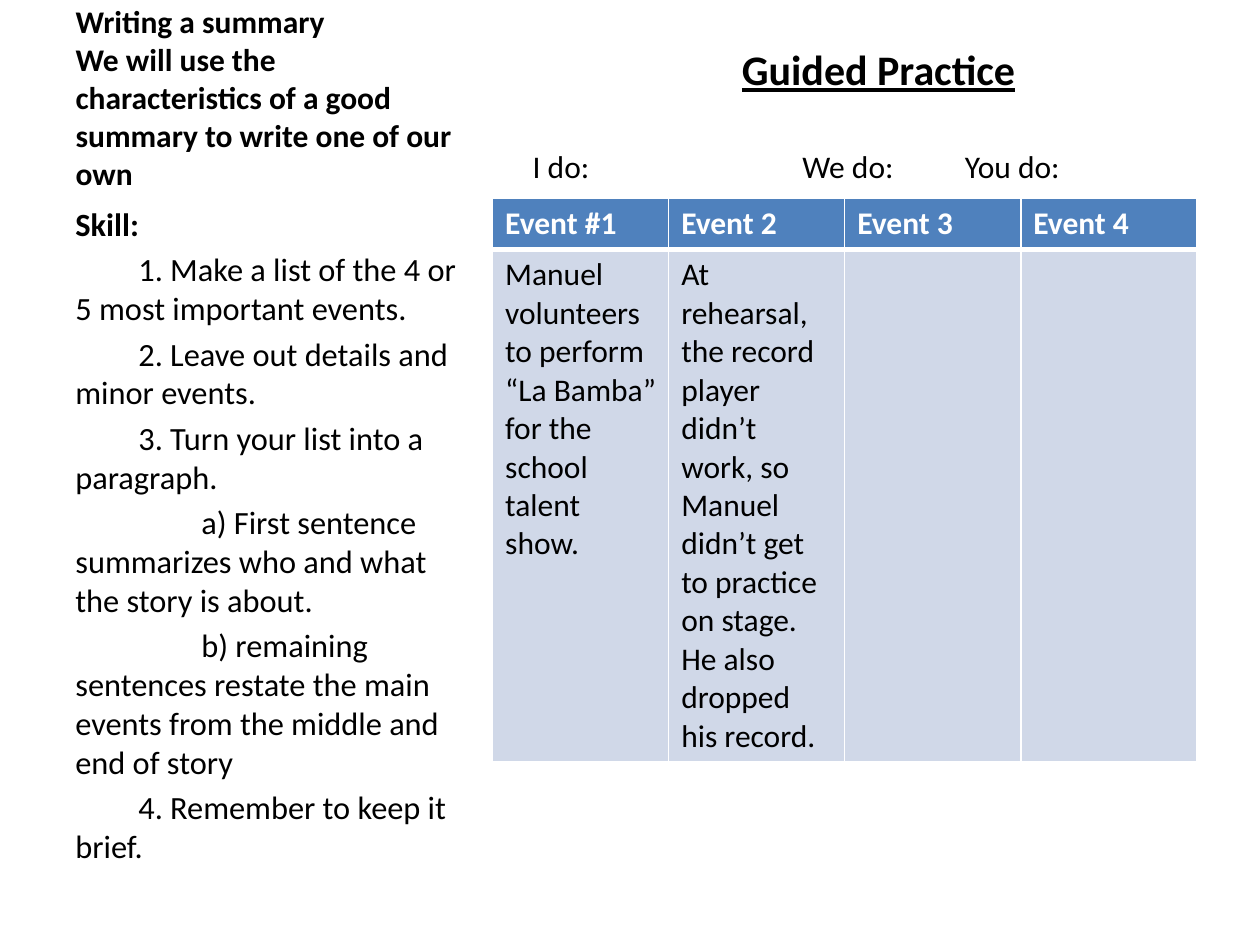
from dataclasses import dataclass

from lxml import etree
from pptx import Presentation
from pptx.dml.color import RGBColor
from pptx.enum.text import MSO_ANCHOR, MSO_AUTO_SIZE, PP_ALIGN
from pptx.oxml.ns import qn
from pptx.util import Inches, Pt

LEFT = PP_ALIGN.LEFT
TOP, BOTTOM = MSO_ANCHOR.TOP, MSO_ANCHOR.BOTTOM
NO_AUTOFIT = MSO_AUTO_SIZE.NONE
TITLE_ONLY = 5


@dataclass(frozen=True)
class Theme:
    font: str = "Calibri"
    text: RGBColor = RGBColor(0x00, 0x00, 0x00)
    white: RGBColor = RGBColor(0xFF, 0xFF, 0xFF)
    header: RGBColor = RGBColor(0x4F, 0x81, 0xBD)
    body: RGBColor = RGBColor(0xD0, 0xD8, 0xE8)
    normal: float = 18
    steps: float = 18.5
    heading: float = 24
    thin: float = 1
    thick: float = 3


class LessonPage:
    """Holds the theme and the current slide."""

    def __init__(self, deck, theme):
        self.theme = theme
        self.page = deck.slides.add_slide(deck.slide_layouts[TITLE_ONLY])

    def style(self, font, color=None, **formats):
        values = {"name": self.theme.font, "size": Pt(self.theme.normal),
                  "bold": False, **formats}
        for name, value in values.items():
            setattr(font, name, value)
        font.color.rgb = color or self.theme.text

    def frame(self, box, anchor=TOP):
        formats = {"word_wrap": True, "auto_size": NO_AUTOFIT,
                   "vertical_anchor": anchor}
        for name, value in formats.items():
            setattr(box.text_frame, name, value)
        return box.text_frame

    def title(self, text, left, top, width, height):
        box = self.page.shapes.title
        places = {"left": left, "top": top, "width": width, "height": height}
        for name, value in places.items():
            setattr(box, name, Inches(value))
        para = self.frame(box, BOTTOM).paragraphs[0]
        para.text = text
        para.alignment = LEFT
        self.style(para.font, bold=True)

    def text(self, text, left, top, width, height, tabs=(), **formats):
        box = self.page.shapes.add_textbox(
            *map(Inches, (left, top, width, height)))
        para = self.frame(box).paragraphs[0]
        para.text = text
        if tabs:
            stops = etree.SubElement(para._p.get_or_add_pPr(), qn("a:tabLst"))
            for place in tabs:
                etree.SubElement(stops, qn("a:tab"),
                                 pos=str(Inches(place)), algn="l")
        self.style(para.font, **formats)

    def steps(self, heading, items, left, top, width, height):
        """A bold heading, then steps whose first lines are indented."""
        box = self.page.shapes.add_textbox(
            *map(Inches, (left, top, width, height)))
        frame = self.frame(box)
        size = Pt(self.theme.steps)
        frame.text = heading
        self.style(frame.paragraphs[0].font, size=size, bold=True)
        for level, text in items:
            para = frame.add_paragraph()
            para.text = text
            para._p.get_or_add_pPr().set("indent", str(Inches(level * 0.5)))
            para.space_before = Pt(self.theme.steps * 0.2)
            self.style(para.font, size=size)

    def borders(self, cell, **widths):
        properties = cell._tc.get_or_add_tcPr()
        for side in "LRTB":
            width = Pt(widths.get(side, self.theme.thin))
            line = etree.SubElement(properties, qn(f"a:ln{side}"),
                                    w=str(width))
            fill = etree.SubElement(line, qn("a:solidFill"))
            etree.SubElement(fill, qn("a:srgbClr"), val=str(self.theme.white))

    def table(self, rows, heights, left, top, width):
        theme = self.theme
        table = self.page.shapes.add_table(
            len(rows), len(rows[0]),
            *map(Inches, (left, top, width, sum(heights)))).table
        for index, values in enumerate(rows):
            table.rows[index].height = Inches(heights[index])
            is_header = index == 0
            for column, value in enumerate(values):
                cell = table.cell(index, column)
                # The thick rule lies between the header and the events
                self.borders(cell, **{"B" if is_header else "T": theme.thick})
                cell.fill.solid()
                cell.fill.fore_color.rgb = (
                    theme.header if is_header else theme.body)
                cell.text = value
                self.style(cell.text_frame.paragraphs[0].font,
                           color=theme.white if is_header else theme.text,
                           bold=is_header)


EVENTS = [
    ["Event #1", "Event 2", "Event 3", "Event 4"],
    ["Manuel volunteers to perform “La Bamba” for the school talent show.",
     "At rehearsal, the record player didn’t work, so Manuel didn’t get to "
     "practice on stage. He also dropped his record.", "", ""],
]
SKILL_STEPS = [
    (1, "1. Make a list of the 4 or 5 most important events."),
    (1, "2. Leave out details and minor events."),
    (1, "3. Turn your list into a paragraph."),
    (2, "a) First sentence summarizes who and what the story is about."),
    (2, "b) remaining sentences restate the main events from the middle "
        "and end of story"),
    (1, "4. Remember to keep it brief."),
]


def main():
    deck = Presentation()
    deck.slide_width, deck.slide_height = Inches(10), Inches(7.5)
    theme = Theme()
    lesson = LessonPage(deck, theme)

    # Left column: objective and skill steps
    lesson.title("Writing a summary\vWe will use the characteristics of a "
                 "good summary to write one of our own", 0.5, 0.3, 3.29, 1.27)
    lesson.steps("Skill:", SKILL_STEPS, 0.5, 1.57, 3.29, 5.13)

    # Right column: guided practice
    lesson.table(EVENTS, [0.41, 4], 3.91, 1.57, 5.59)
    lesson.text("Guided Practice", 5.79, 0.3, 2.76, 0.5,
                size=Pt(theme.heading), bold=True, underline=True)
    lesson.text("I do:\tWe do:\tYou do:", 4.13, 1.12, 5.14, 0.4,
                tabs=(2.14, 3.43))

    deck.save("out.pptx")


if __name__ == "__main__":
    main()
